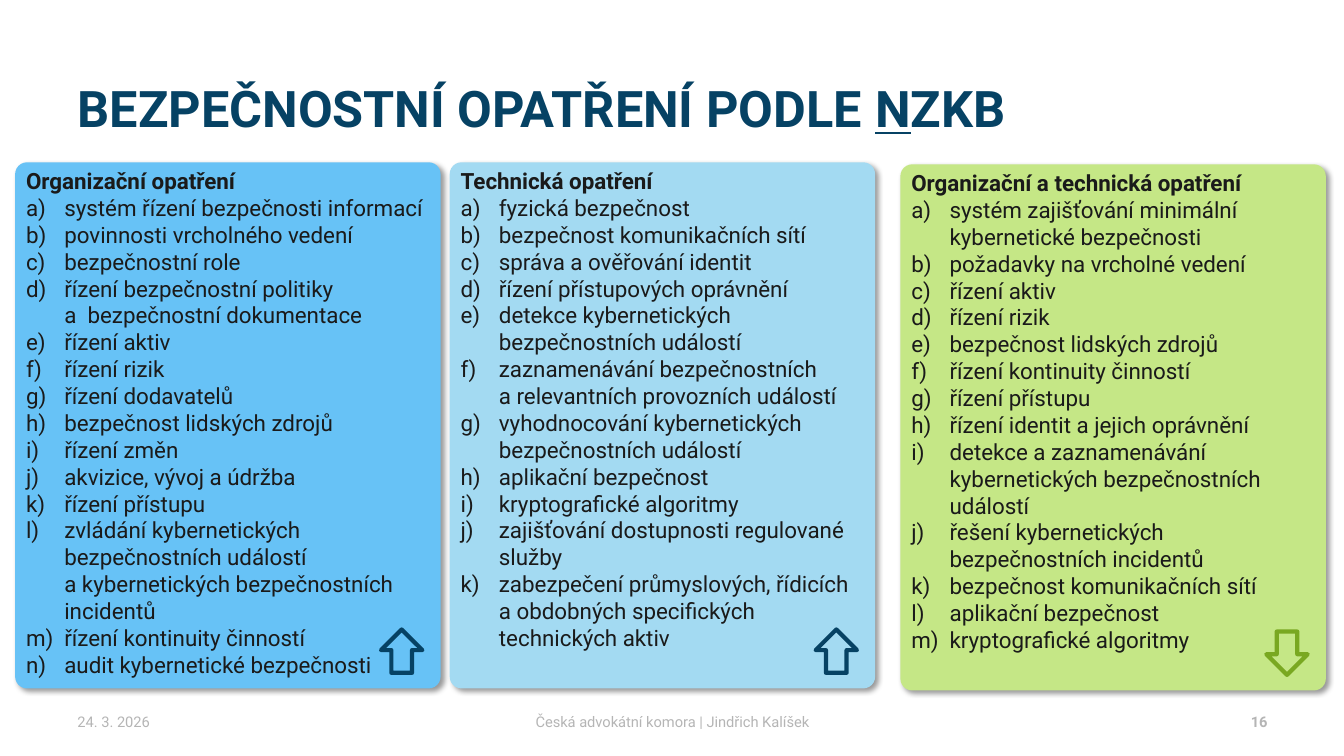
from dataclasses import dataclass

from lxml.etree import SubElement
from pptx import Presentation
from pptx.dml.color import RGBColor as Rgb
from pptx.enum.shapes import MSO_SHAPE as Shape
from pptx.enum.text import MSO_ANCHOR as Anchor, MSO_AUTO_SIZE as AutoSize, PP_ALIGN as Align
from pptx.oxml.ns import qn
from pptx.util import Inches, Pt


@dataclass(frozen=True)
class Theme:
    """Colours, font and type sizes of the deck."""
    font: str = "Roboto"
    navy: str = "064264"
    ink: str = "1A1A1A"
    muted: str = "B5B5B5"
    blue: str = "67C2F6"
    pale_blue: str = "A3DAF2"
    lime: str = "C5E786"
    green: str = "79A821"
    title_size: float = 36
    body_size: float = 16
    footer_size: float = 10.5


THEME = Theme()
SLIDE_SIZE = (13.33, 7.5)
CARD_SIZE = (4.22, 5.22)
MARGIN = 0.67
TITLE = [("BEZPEČNOSTNÍ OPATŘENÍ PODLE ", False), ("N", True), ("ZKB", False)]
CARDS = [
    dict(origin=(0.15, 1.61), fill=THEME.blue, accent=THEME.navy, turn=0, text_height=5.22,
         heading="Organizační opatření",
         measures=["systém řízení bezpečnosti informací", "povinnosti vrcholného vedení",
                   "bezpečnostní role", "řízení bezpečnostní politiky \na  bezpečnostní dokumentace",
                   "řízení aktiv", "řízení rizik", "řízení dodavatelů",
                   "bezpečnost lidských zdrojů", "řízení změn", "akvizice, vývoj a údržba",
                   "řízení přístupu",
                   "zvládání kybernetických bezpečnostních událostí \n"
                   "a kybernetických bezpečnostních incidentů",
                   "řízení kontinuity činností", "audit kybernetické bezpečnosti"]),
    dict(origin=(4.46, 1.61), fill=THEME.pale_blue, accent=THEME.navy, turn=0, text_height=4.95,
         heading="Technická opatření",
         measures=["fyzická bezpečnost", "bezpečnost komunikačních sítí",
                   "správa a ověřování identit", "řízení přístupových oprávnění",
                   "detekce kybernetických bezpečnostních událostí",
                   "zaznamenávání bezpečnostních \na relevantních provozních událostí",
                   "vyhodnocování kybernetických bezpečnostních událostí",
                   "aplikační bezpečnost", "kryptografické algoritmy",
                   "zajišťování dostupnosti regulované služby",
                   "zabezpečení průmyslových, řídicích \na obdobných specifických technických aktiv"]),
    dict(origin=(8.93, 1.63), fill=THEME.lime, accent=THEME.green, turn=180, text_height=4.95,
         heading="Organizační a technická opatření",
         measures=["systém zajišťování minimální kybernetické bezpečnosti",
                   "požadavky na vrcholné vedení", "řízení aktiv", "řízení rizik",
                   "bezpečnost lidských zdrojů", "řízení kontinuity činností", "řízení přístupu",
                   "řízení identit a jejich oprávnění",
                   "detekce a zaznamenávání kybernetických bezpečnostních událostí",
                   "řešení kybernetických bezpečnostních incidentů",
                   "bezpečnost komunikačních sítí", "aplikační bezpečnost",
                   "kryptografické algoritmy"]),
]
FOOTER = [("24. 3. 2026", MARGIN, 3.11, Align.LEFT, False),
          ("Česká advokátní komora | Jindřich Kalíšek", 4.56, 4.22, Align.CENTER, False),
          ("16", 9.56, 3.11, Align.RIGHT, True)]


def assign(target, **values):
    """Set each named attribute on the target."""
    for name, value in values.items():
        setattr(target, name, value)


def style_font(font, size, color, **values):
    """Apply the theme font with a size, a colour and further attributes."""
    assign(font, name=THEME.font, size=Pt(size), **values)
    font.color.rgb = Rgb.from_string(color)


def write(paragraph, text, size, color, **values):
    """Fill a paragraph, breaking lines at newlines."""
    paragraph.text = text.replace("\n", "\v")
    for run in paragraph.runs:
        style_font(run.font, size, color, **values)
    for line_break in paragraph._p.findall(qn("a:br")):
        SubElement(line_break, qn("a:rPr"), sz=str(int(size * 100)))


def number(paragraph):
    """Letter a paragraph with a hanging indent."""
    properties = paragraph._p.get_or_add_pPr()
    indent = Inches(0.38)
    properties.set("marL", str(indent))
    properties.set("indent", str(-indent))
    SubElement(properties, qn("a:buFont"), typeface="+mj-lt")
    SubElement(properties, qn("a:buAutoNum"), type="alphaLcParenR")


def cast_shadow(shape):
    """Give a shape a soft shadow towards the lower right."""
    effects = SubElement(shape._element.spPr, qn("a:effectLst"))
    shadow = SubElement(effects, qn("a:outerShdw"), blurRad=str(Pt(4)), dist=str(Pt(3)),
                        dir=str(45 * 60000), algn="tl", rotWithShape="0")
    color = SubElement(shadow, qn("a:srgbClr"), val="000000")
    SubElement(color, qn("a:alpha"), val="40000")


def add_title(slide, left, top, width, height):
    """Place the headline in the title placeholder."""
    title = slide.shapes.title
    assign(title, left=Inches(left), top=Inches(top), width=Inches(width), height=Inches(height))
    assign(title.text_frame, vertical_anchor=Anchor.TOP, auto_size=AutoSize.NONE, word_wrap=True)
    headline = title.text_frame.paragraphs[0]
    assign(headline, alignment=Align.LEFT, line_spacing=0.85)
    for text, underline in TITLE:
        part = headline.add_run()
        part.text = text
        style_font(part.font, THEME.title_size, THEME.navy, bold=True, underline=underline)


def add_card(slide, origin, fill, accent, turn, text_height, heading, measures):
    """Draw a card with its lettered measures and its arrow."""
    left, top = origin
    width, height = CARD_SIZE
    card = slide.shapes.add_shape(Shape.ROUNDED_RECTANGLE, *map(Inches, (left, top, width, height)))
    card.adjustments[0] = 0.028
    card.fill.solid()
    card.fill.fore_color.rgb = Rgb.from_string(fill)
    card.line.fill.background()
    cast_shadow(card)

    listing = slide.shapes.add_textbox(*map(Inches, (left + 0.01, top, width, text_height)))
    frame = listing.text_frame
    assign(frame, word_wrap=True, auto_size=AutoSize.SHAPE_TO_FIT_TEXT)
    write(frame.paragraphs[0], heading, THEME.body_size, THEME.ink, bold=True)
    for measure in measures:
        entry = frame.add_paragraph()
        number(entry)
        write(entry, measure, THEME.body_size, THEME.ink, bold=False)

    arrow_box = (left + width * 0.86, top + height * 0.888, 0.41, 0.43)
    arrow = slide.shapes.add_shape(Shape.UP_ARROW, *map(Inches, arrow_box))
    assign(arrow, rotation=turn)
    arrow.shadow.inherit = False
    arrow.fill.background()
    arrow.line.color.rgb = Rgb.from_string(accent)
    arrow.line.width = Pt(3)


def add_footer(slide, top, height):
    """Place the date, the author and the slide number."""
    for text, left, width, alignment, bold in FOOTER:
        note = slide.shapes.add_textbox(*map(Inches, (left, top, width, height)))
        assign(note.text_frame, word_wrap=True, vertical_anchor=Anchor.MIDDLE)
        line = note.text_frame.paragraphs[0]
        assign(line, alignment=alignment)
        write(line, text, THEME.footer_size, THEME.muted, bold=bold)


def main():
    """Build the slide and save it."""
    deck = Presentation()
    deck.slide_width, deck.slide_height = map(Inches, SLIDE_SIZE)
    slide = deck.slides.add_slide(deck.slide_layouts[5])
    add_title(slide, MARGIN, 0.81, 12, 0.87)
    for card in CARDS:
        add_card(slide, **card)
    add_footer(slide, 6.96, 0.39)
    deck.save("out.pptx")


if __name__ == "__main__":
    main()
